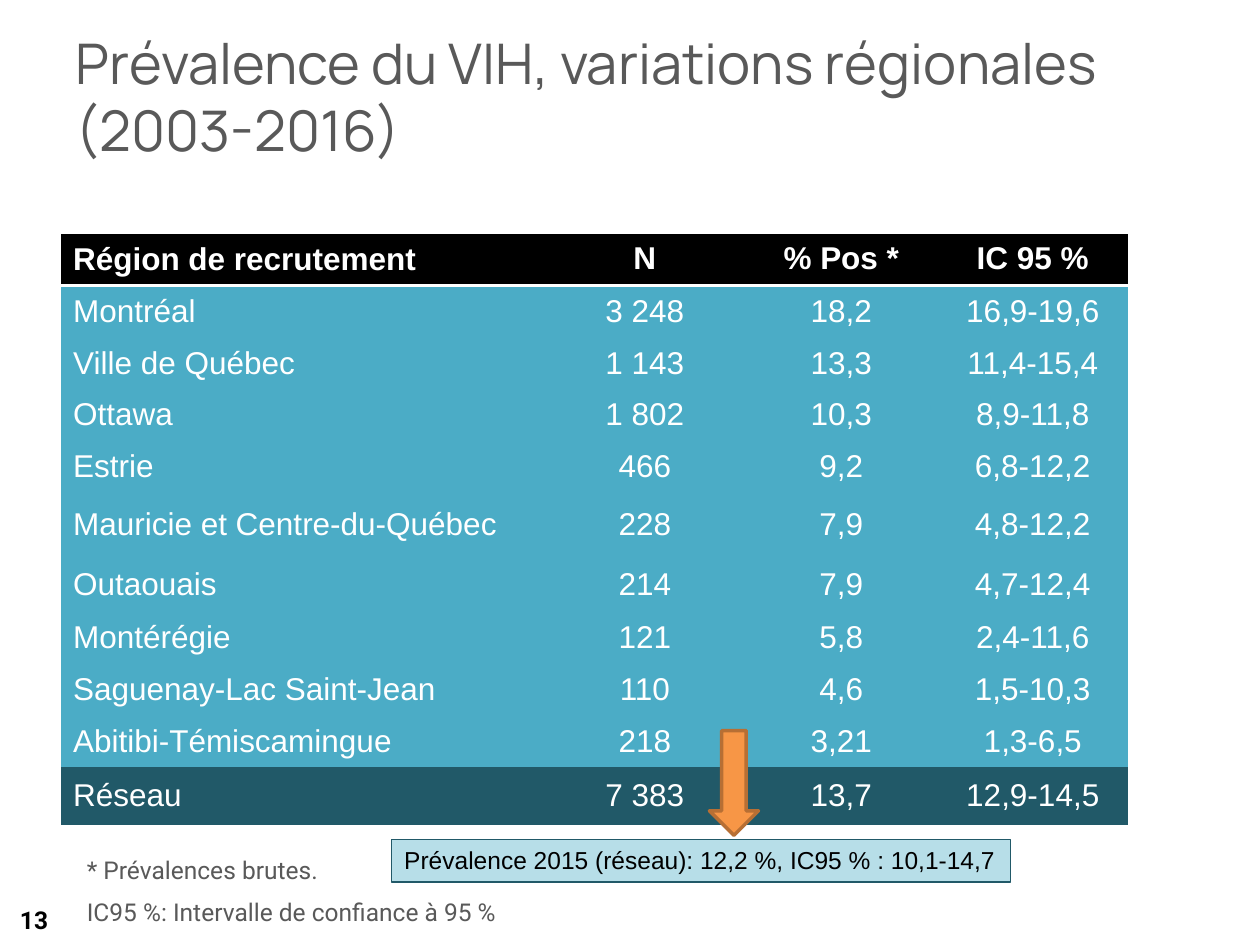
from dataclasses import dataclass

from pptx import Presentation
from pptx.dml.color import RGBColor
from pptx.enum.shapes import MSO_SHAPE
from pptx.enum.text import MSO_ANCHOR, PP_ALIGN
from pptx.oxml import parse_xml
from pptx.oxml.ns import nsdecls, qn
from pptx.util import Cm, Pt

LEFT, CENTER, RIGHT = PP_ALIGN.LEFT, PP_ALIGN.CENTER, PP_ALIGN.RIGHT
TOP, MIDDLE = MSO_ANCHOR.TOP, MSO_ANCHOR.MIDDLE
RECT, ARROW = MSO_SHAPE.RECTANGLE, MSO_SHAPE.RIGHT_ARROW
NO_GRID = "{2D5ABB26-0587-4C30-8999-92F81FD0307C}"


@dataclass(frozen=True)
class Theme:
    head_font: str = "Manrope"
    note_font: str = "Roboto"
    data_font: str = "Arial"
    gray: str = "595959"
    black: str = "000000"
    white: str = "FFFFFF"
    teal: str = "4BACC6"
    deep: str = "215968"
    pale: str = "B7DEE8"
    orange: str = "F79646"
    rust: str = "B76F34"
    title: int = 32
    data: int = 18
    note: int = 14


HEAD = ("Région de recrutement", "N", "% Pos *", "IC 95 %")
REGIONS = (
    ("Montréal", "3 248", "18,2", "16,9-19,6"),
    ("Ville de Québec", "1 143", "13,3", "11,4-15,4"),
    ("Ottawa", "1 802", "10,3", "8,9-11,8"),
    ("Estrie", "466", "9,2", "6,8-12,2"),
    ("Mauricie et Centre-du-Québec", "228", "7,9", "4,8-12,2"),
    ("Outaouais", "214", "7,9", "4,7-12,4"),
    ("Montérégie", "121", "5,8", "2,4-11,6"),
    ("Saguenay-Lac Saint-Jean", "110", "4,6", "1,5-10,3"),
    ("Abitibi-Témiscamingue", "218", "3,21", "1,3-6,5"),
)
TOTAL = ("Réseau", "7 383", "13,7", "12,9-14,5")
WIDTHS = (9.75, 4.06, 3.86, 3.86)
HEIGHTS = (1.04,) * 5 + (1.32, 1.07, 1.07, 1.04, 1.04, 1.17)


def color(code):
    return RGBColor.from_string(code)


def paint(fill, code):
    fill.solid()
    fill.fore_color.rgb = color(code)


class Deck:
    def __init__(self, theme):
        self.theme = theme
        self.file = Presentation()
        self.file.slide_width, self.file.slide_height = Cm(25.4), Cm(19.05)
        self.slide = self.file.slides.add_slide(self.file.slide_layouts[5])
        self.shapes = self.slide.shapes

    def run(self, para, text, font, size, code, bold=False, align=LEFT):
        para.alignment = align
        run = para.add_run()
        run.text = text
        run.font.name, run.font.size, run.font.bold = font, Pt(size), bold
        run.font.color.rgb = color(code)

    def title(self, text, box):
        shape = self.shapes.title
        shape.left, shape.top, shape.width, shape.height = map(Cm, box)
        shape.text_frame.vertical_anchor = MIDDLE
        self.run(shape.text_frame.paragraphs[0], text,
                 self.theme.head_font, self.theme.title, self.theme.gray)

    def text(self, lines, box, code, bold=False, align=LEFT, anchor=TOP, gap=0):
        frame = self.shapes.add_textbox(*map(Cm, box)).text_frame
        frame.word_wrap = True
        frame.vertical_anchor = anchor
        for i, line in enumerate(lines):
            para = frame.add_paragraph() if i else frame.paragraphs[0]
            if i:
                para.space_before = Pt(gap)
            self.run(para, line, self.theme.note_font, self.theme.note,
                     code, bold, align)

    def shape(self, kind, box, fill, line, width):
        shape = self.shapes.add_shape(kind, *map(Cm, box))
        shape.shadow.inherit = False
        paint(shape.fill, fill)
        shape.line.color.rgb = color(line)
        shape.line.width = Pt(width)
        return shape

    def callout(self, text, box):
        theme = self.theme
        frame = self.shape(RECT, box, theme.pale, theme.deep, 0.75).text_frame
        frame.word_wrap = False
        frame.vertical_anchor = TOP
        self.run(frame.paragraphs[0], text, theme.data_font, theme.note,
                 theme.black)

    def arrow(self, box):
        theme = self.theme
        self.shape(ARROW, box, theme.orange, theme.rust, 2).rotation = 90

    def underline(self, cell):
        """Draw a white rule along the bottom edge of a cell."""
        rule = parse_xml(
            f'<a:lnB {nsdecls("a")} w="{Pt(2)}"><a:solidFill>'
            f'<a:srgbClr val="{self.theme.white}"/></a:solidFill></a:lnB>')
        cell._tc.get_or_add_tcPr().insert(0, rule)

    def table(self, rows, left, top):
        theme = self.theme
        box = (left, top, sum(WIDTHS), sum(HEIGHTS))
        grid = self.shapes.add_table(len(rows), len(WIDTHS),
                                     *map(Cm, box)).table
        grid._tbl.tblPr.find(qn("a:tableStyleId")).text = NO_GRID
        grid.horz_banding = False
        for col, width in zip(grid.columns, WIDTHS):
            col.width = Cm(width)
        for row, height in zip(grid.rows, HEIGHTS):
            row.height = Cm(height)
        fills = [theme.black] + [theme.teal] * (len(rows) - 2) + [theme.deep]
        for r, (row, fill) in enumerate(zip(rows, fills)):
            for c, text in enumerate(row):
                cell = grid.cell(r, c)
                paint(cell.fill, fill)
                cell.vertical_anchor = TOP if r == 0 and c else MIDDLE
                self.run(cell.text_frame.paragraphs[0], text,
                         theme.data_font, theme.data, theme.white,
                         r == 0, CENTER if c else LEFT)
                if r == 0:
                    self.underline(cell)


def main():
    theme = Theme()
    deck = Deck(theme)
    deck.title("Prévalence du VIH, variations régionales (2003-2016)",
               (1.27, 0.33, 22.86, 3.18))
    deck.text(["13"], (0, 18.03, 1.22, 1.02), theme.black, True, RIGHT, MIDDLE)
    deck.table((HEAD, *REGIONS, TOTAL), 1.22, 4.72)
    deck.text(["* Prévalences brutes.",
               "IC95 %: Intervalle de confiance à 95 %"],
              (1.5, 17.12, 18.64, 1.75), theme.gray, gap=7)
    deck.callout("Prévalence 2015 (réseau): 12,2 %, IC95 % : 10,1-14,7",
                 (7.9, 16.92, 12.47, 0.86))
    deck.arrow((13.74, 15.29, 2.11, 0.99))
    deck.file.save("out.pptx")


if __name__ == "__main__":
    main()
